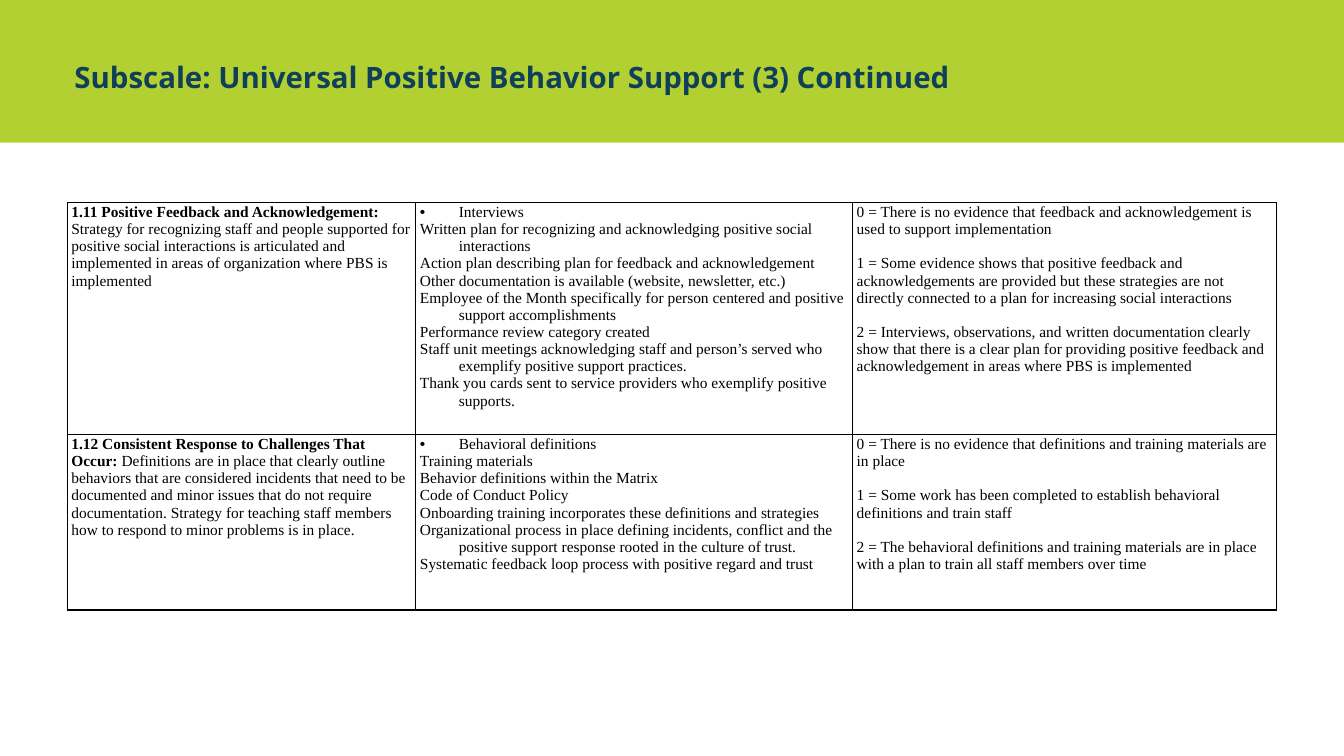
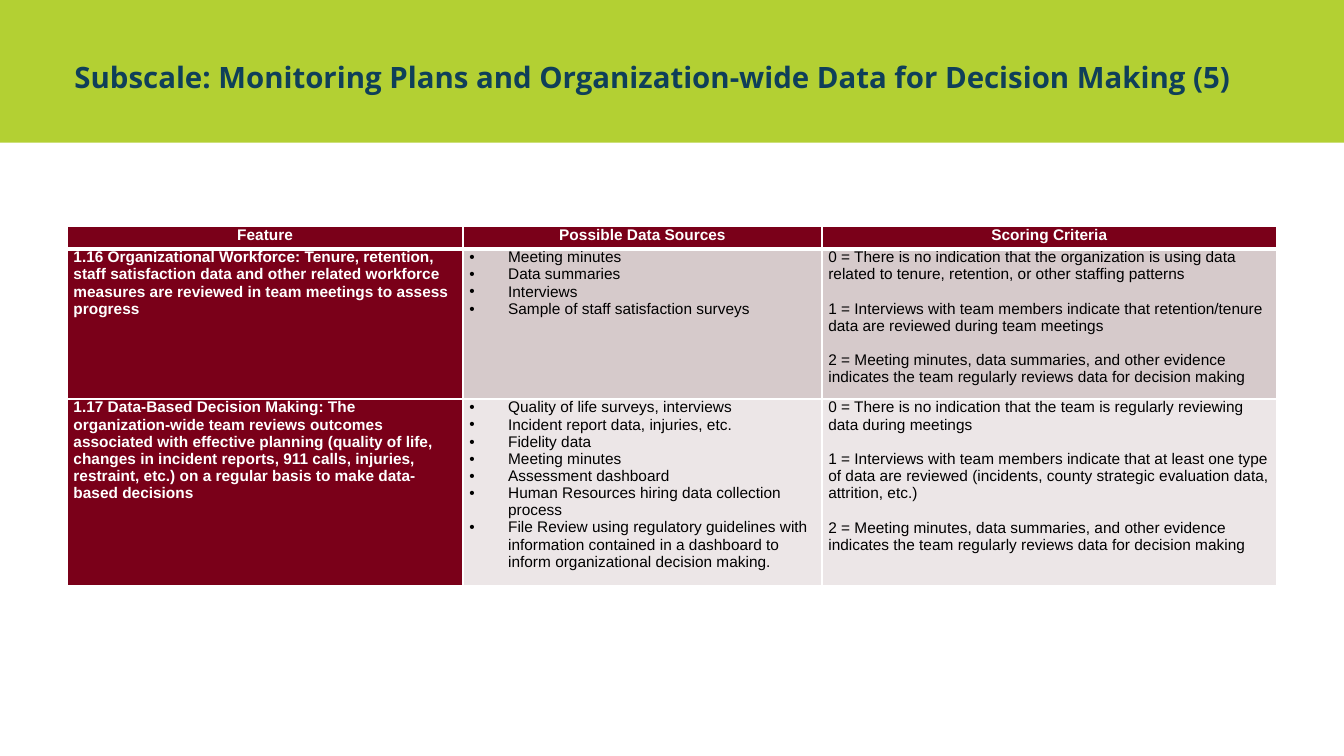
from lxml import etree
from pptx import Presentation
from pptx import util as u
from pptx.dml.color import RGBColor
from pptx.enum import shapes, text
from pptx.oxml.ns import qn

COLORS = {"band": "B3D033", "title": "0F3F59", "black": "000000", "white": "FFFFFF",
          "maroon": "7A0019", "rose": "D6CACB", "blush": "ECE6E7"}
PX = 9525
WIDTH, HEIGHT, MARGIN = 1280, 720, 64


def px(n):
    return u.Emu(n * PX)


def rgb(name):
    return RGBColor.from_string(COLORS[name])


class Deck:
    """Holds the shared style and the slide being built."""

    title_font = "Open Sans"
    text_size = 11
    line_pitch = 12.3
    indent = 37

    def __init__(self):
        self.prs = Presentation()
        self.prs.slide_width, self.prs.slide_height = px(WIDTH), px(HEIGHT)
        self.s = None

    def slide(self, title):
        self.s = self.prs.slides.add_slide(self.prs.slide_layouts[6])
        sp = self.s.shapes.add_shape(shapes.MSO_SHAPE.RECTANGLE, 0, 0, px(WIDTH), px(136))
        sp.shadow.inherit = False
        sp.fill.solid()
        sp.fill.fore_color.rgb = rgb("band")
        sp.line.fill.background()
        box = self.s.shapes.add_textbox(px(MARGIN), px(29), px(WIDTH - 2 * MARGIN), px(88))
        tf = box.text_frame
        tf.word_wrap = True
        tf.vertical_anchor = text.MSO_ANCHOR.MIDDLE
        tf.margin_left = tf.margin_right = px(7)
        tf.margin_top = tf.margin_bottom = px(4)
        self.run(tf.paragraphs[0], title, self.title_font, 21, "title", True)

    def run(self, p, words, font, size, color, bold=False):
        r = p.add_run()
        r.text = words
        r.font.name, r.font.size, r.font.bold = font, u.Pt(size), bold
        r.font.color.rgb = rgb(color)

    def table(self, top, cols, rows):
        sp = self.s.shapes.add_table(len(rows), len(cols), px(MARGIN), px(top),
                                     px(sum(cols)), px(sum(rows)))
        tbl = sp.table
        tbl.first_row = tbl.horz_banding = False
        for col, width in zip(tbl.columns, cols):
            col.width = px(width)
        for row, height in zip(tbl.rows, rows):
            row.height = px(height)
        return tbl

    def cell(self, cell, paragraphs, font, insets, border, color="black", fill=None,
             bullets=0, hanging=False, gap=0, centered=False, bottom=1):
        cell.margin_left, cell.margin_top, cell.margin_right, cell.margin_bottom = map(px, insets)
        self.borders(cell, border, bottom)
        if fill:
            cell.fill.solid()
            cell.fill.fore_color.rgb = rgb(fill)
        else:
            cell.fill.background()
        tf = cell.text_frame
        for i, runs in enumerate(paragraphs):
            p = tf.add_paragraph() if i else tf.paragraphs[0]
            if hanging:
                self.hang(p, i < bullets)
            if i and gap:
                p.space_before = u.Pt(gap)
            if centered:
                p.alignment = text.PP_ALIGN.CENTER
            for words, bold in runs:
                self.run(p, words, font, self.text_size, color, bold)

    def hang(self, p, bullet):
        pPr = p._p.get_or_add_pPr()
        pPr.set("marL", str(px(self.indent)))
        pPr.set("indent", str(-px(self.indent)))
        if bullet:
            etree.SubElement(pPr, qn("a:buFont"), typeface="Arial")
            etree.SubElement(pPr, qn("a:buChar"), char="•")

    def borders(self, cell, color, bottom):
        tcPr = cell._tc.get_or_add_tcPr()
        for side in "LRTB":
            width = bottom if side == "B" else 1
            ln = etree.SubElement(tcPr, qn("a:ln" + side), w=str(u.Pt(width)))
            fill = etree.SubElement(ln, qn("a:solidFill"))
            etree.SubElement(fill, qn("a:srgbClr"), val=COLORS[color])

    def rubric(self, top, cols, rows, items, font, insets, border, header=(),
               feature=("black", None), fills=(None, None), all_bullets=True):
        tbl = self.table(top, cols, rows)
        look = dict(font=font, insets=insets, border=border)
        for c, label in enumerate(header):
            self.cell(tbl.cell(0, c), [[(label, True)]], color="white", fill="maroon",
                      centered=True, bottom=3, **look)
        first = 1 if header else 0
        for i, (name, sources, criteria) in enumerate(items):
            row, fill = first + i, fills[i]
            self.cell(tbl.cell(row, 0), [name], color=feature[0], fill=feature[1], **look)
            self.cell(tbl.cell(row, 1), plain(sources), fill=fill, hanging=True,
                      bullets=len(sources) if all_bullets else 1, **look)
            self.cell(tbl.cell(row, 2), plain(criteria), fill=fill, gap=self.line_pitch, **look)


def plain(lines):
    return [[(line, False)] for line in lines]


SUPPORT = [
    ([("1.11 Positive Feedback and Acknowledgement: ", True),
      ("Strategy for recognizing staff and people supported for positive social interactions "
       "is articulated and implemented in areas of organization where PBS is implemented", False)],
     ["Interviews",
      "Written plan for recognizing and acknowledging positive social interactions",
      "Action plan describing plan for feedback and acknowledgement",
      "Other documentation is available (website, newsletter, etc.)",
      "Employee of the Month specifically for person centered and positive support accomplishments",
      "Performance review category created",
      "Staff unit meetings acknowledging staff and person’s served who exemplify positive "
      "support practices.",
      "Thank you cards sent to service providers who exemplify positive supports."],
     ["0 = There is no evidence that feedback and acknowledgement is used to support implementation",
      "1 = Some evidence shows that positive feedback and acknowledgements are provided but these "
      "strategies are not directly connected to a plan for increasing social interactions",
      "2 = Interviews, observations, and written documentation clearly show that there is a clear "
      "plan for providing positive feedback and acknowledgement in areas where PBS is implemented"]),
    ([("1.12 Consistent Response to Challenges That Occur: ", True),
      ("Definitions are in place that clearly outline behaviors that are considered incidents that "
       "need to be documented and minor issues that do not require documentation. Strategy for "
       "teaching staff members how to respond to minor problems is in place.", False)],
     ["Behavioral definitions",
      "Training materials",
      "Behavior definitions within the Matrix",
      "Code of Conduct Policy",
      "Onboarding training incorporates these definitions and strategies",
      "Organizational process in place defining incidents, conflict and the positive support "
      "response rooted in the culture of trust.",
      "Systematic feedback loop process with positive regard and trust"],
     ["0 = There is no evidence that definitions and training materials are in place",
      "1 = Some work has been completed to establish behavioral definitions and train staff",
      "2 = The behavioral definitions and training materials are in place with a plan to train "
      "all staff members over time"]),
]

REGULAR_REVIEW = ("2 = Meeting minutes, data summaries, and other evidence indicates the team "
                  "regularly reviews data for decision making")

MONITORING = [
    ([("1.16 Organizational Workforce: Tenure, retention, staff satisfaction data and other related "
       "workforce measures are reviewed in team meetings to assess progress", True)],
     ["Meeting minutes", "Data summaries", "Interviews", "Sample of staff satisfaction surveys"],
     ["0 = There is no indication that the organization is using data related to tenure, "
      "retention, or other staffing patterns",
      "1 = Interviews with team members indicate that retention/tenure data are reviewed during "
      "team meetings",
      REGULAR_REVIEW]),
    ([("1.17 Data-Based Decision Making: The organization-wide team reviews outcomes associated with "
       "effective planning (quality of life, changes in incident reports, 911 calls, injuries, "
       "restraint, etc.) on a regular basis to make data-based decisions", True)],
     ["Quality of life surveys, interviews",
      "Incident report data, injuries, etc.",
      "Fidelity data",
      "Meeting minutes",
      "Assessment dashboard",
      "Human Resources hiring data collection process",
      "File Review using regulatory guidelines with information contained in a dashboard to "
      "inform organizational decision making."],
     ["0 = There is no indication that the team is regularly reviewing data during meetings",
      "1 = Interviews with team members indicate that at least one type of data are reviewed "
      "(incidents, county strategic evaluation data, attrition, etc.)",
      REGULAR_REVIEW]),
]


def main():
    deck = Deck()
    deck.slide("Subscale: Universal Positive Behavior Support (3) Continued")
    deck.rubric(193, (332, 416, 404), (221, 167), SUPPORT, "Times New Roman", (4, 1, 4, 0),
                "black", all_bullets=False)
    deck.slide("Subscale: Monitoring Plans and Organization-wide Data for Decision Making (5)")
    deck.rubric(216, (377, 342, 433), (21, 143, 178), MONITORING, "Arial", (6, 0, 6, 0), "white",
                header=("Feature", "Possible Data Sources", "Scoring Criteria"),
                feature=("white", "maroon"), fills=("rose", "blush"))
    deck.prs.save("out.pptx")


if __name__ == "__main__":
    main()
